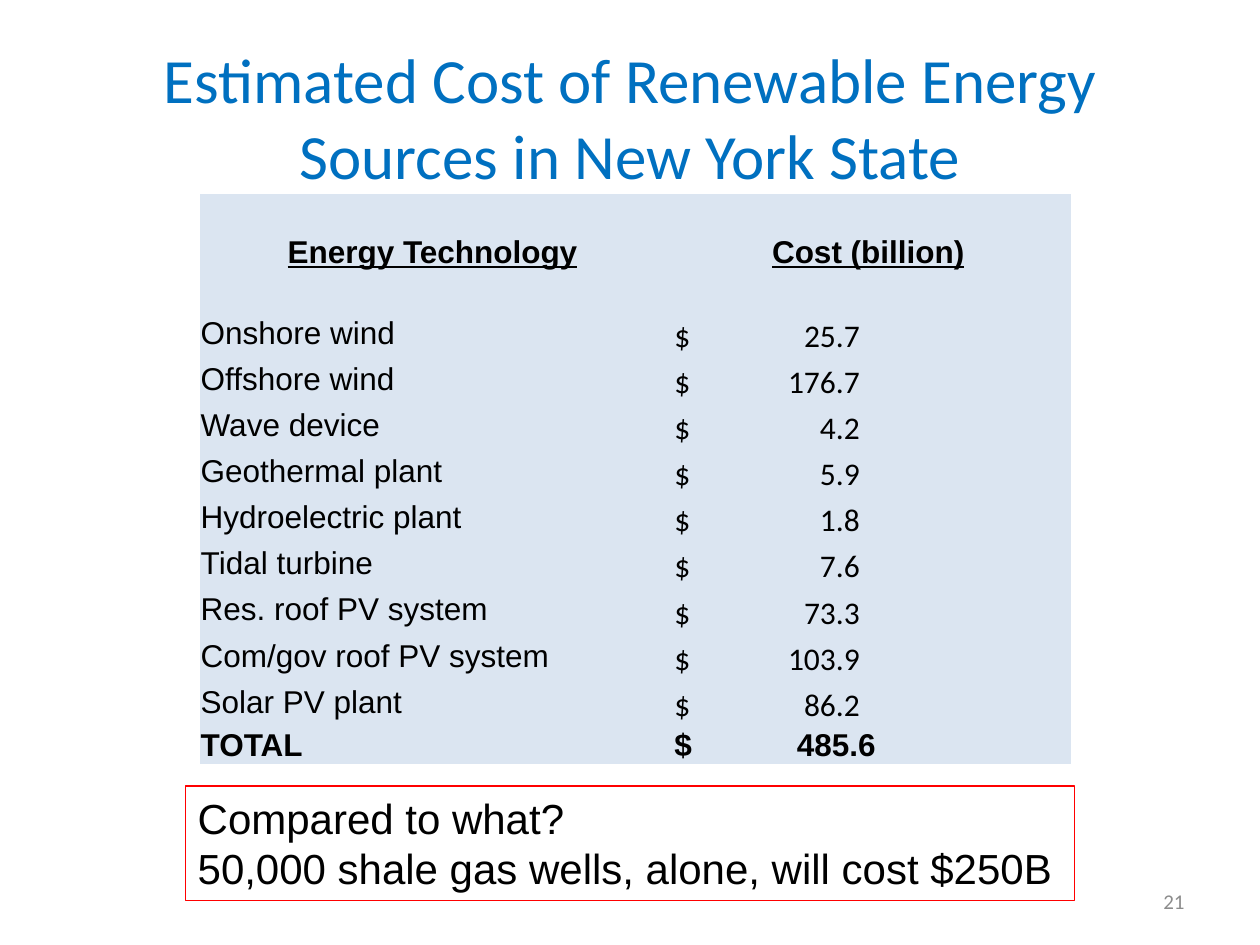
from dataclasses import dataclass

from lxml import etree
from pptx import Presentation
from pptx.dml.color import RGBColor
from pptx.enum import shapes, text
from pptx.oxml import ns
from pptx.util import Pt


@dataclass(frozen=True)
class Theme:
    heading: RGBColor = RGBColor(0x00, 0x70, 0xC0)
    ink: RGBColor = RGBColor(0, 0, 0)
    muted: RGBColor = RGBColor(0x8C, 0x8C, 0x8C)
    band: RGBColor = RGBColor(0xDB, 0xE5, 0xF1)
    paper: RGBColor = RGBColor(0xFF, 0xFF, 0xFF)
    alert: RGBColor = RGBColor(0xFF, 0, 0)
    sans: str = "Arial"
    body: str = "Calibri"
    title_size: int = 36
    note_size: int = 24
    table_size: int = 18
    number_size: int = 12


THEME = Theme()
NO_GRID_STYLE = "{2D5ABB26-0587-4C30-8999-92F81FD0307C}"
COSTS = [
    ("Onshore wind", "25.7"),
    ("Offshore wind", "176.7"),
    ("Wave device", "4.2"),
    ("Geothermal plant", "5.9"),
    ("Hydroelectric plant", "1.8"),
    ("Tidal turbine", "7.6"),
    ("Res. roof PV system", "73.3"),
    ("Com/gov roof PV system", "103.9"),
    ("Solar PV plant", "86.2"),
]


def style(paragraph, face, size, color, align=text.PP_ALIGN.LEFT, bold=False, underline=False):
    paragraph.alignment = align
    font = paragraph.font
    font.name, font.size, font.bold, font.underline = face, Pt(size), bold, underline
    font.color.rgb = color


def add_right_tab(paragraph, position):
    stops = etree.Element(ns.qn("a:tabLst"))
    etree.SubElement(stops, ns.qn("a:tab"), pos=str(Pt(position)), algn="r")
    paragraph.font
    properties = paragraph._p.get_or_add_pPr()
    properties.find(ns.qn("a:defRPr")).addprevious(stops)


def place_heading(slide, left, top, width, height):
    heading = slide.shapes.title
    heading.left, heading.top, heading.width, heading.height = map(Pt, (left, top, width, height))
    heading.text_frame.text = "Estimated Cost of Renewable Energy Sources in New York State"
    heading.text_frame.vertical_anchor = text.MSO_ANCHOR.MIDDLE
    style(heading.text_frame.paragraphs[0], THEME.body, THEME.title_size, THEME.heading,
          text.PP_ALIGN.CENTER)


def fill_cell(cell, wording, anchor, inset=0.7, face=THEME.sans, tab=None, **look):
    cell.fill.solid()
    cell.fill.fore_color.rgb = THEME.band
    cell.margin_left, cell.margin_right = Pt(inset), Pt(0.7)
    cell.margin_top, cell.margin_bottom = Pt(0.7), Pt(0)
    cell.vertical_anchor = anchor
    cell.text = wording
    paragraph = cell.text_frame.paragraphs[0]
    style(paragraph, face, THEME.table_size, THEME.ink, **look)
    if tab:
        add_right_tab(paragraph, tab)


def place_costs(slide, left, top, width, height):
    middle, bottom = text.MSO_ANCHOR.MIDDLE, text.MSO_ANCHOR.BOTTOM
    header_height, total_height = 66.3, 21.6
    row_height = (height - header_height - total_height) / len(COSTS)
    technology_width = 266.4

    frame = slide.shapes.add_table(len(COSTS) + 2, 2, Pt(left), Pt(top), Pt(width), Pt(height))
    costs = frame.table
    costs.first_row = costs.horz_banding = False
    costs._tbl.tblPr.find(ns.qn("a:tableStyleId")).text = NO_GRID_STYLE
    costs.columns[0].width = Pt(technology_width)
    costs.columns[1].width = Pt(width - technology_width)
    heights = [header_height] + [row_height] * len(COSTS) + [total_height]
    for row, row_size in zip(costs.rows, heights):
        row.height = Pt(row_size)

    for column, label in enumerate(("Energy Technology", "Cost (billion)")):
        fill_cell(costs.cell(0, column), label, middle,
                  align=text.PP_ALIGN.CENTER, bold=True, underline=True)
    for row, (technology, cost) in enumerate(COSTS, start=1):
        fill_cell(costs.cell(row, 0), technology, middle)
        fill_cell(costs.cell(row, 1), f"$\t{cost}", bottom, inset=5, face=THEME.body, tab=106)
    total = len(COSTS) + 1
    fill_cell(costs.cell(total, 0), "TOTAL", bottom, bold=True)
    fill_cell(costs.cell(total, 1), "$\t485.6", bottom, inset=5, tab=115, bold=True)


def place_comparison(slide, left, top, width, height):
    comparison = slide.shapes.add_shape(
        shapes.MSO_SHAPE.RECTANGLE, Pt(left), Pt(top), Pt(width), Pt(height))
    comparison.shadow.inherit = False
    comparison.fill.solid()
    comparison.fill.fore_color.rgb = THEME.paper
    comparison.line.color.rgb = THEME.alert
    comparison.line.width = Pt(0.75)
    words = comparison.text_frame
    words.text = "Compared to what?\n50,000 shale gas wells, alone, will cost $250B"
    words.word_wrap = False
    words.auto_size = text.MSO_AUTO_SIZE.SHAPE_TO_FIT_TEXT
    words.vertical_anchor = text.MSO_ANCHOR.TOP
    for paragraph in words.paragraphs:
        style(paragraph, THEME.sans, THEME.note_size, THEME.ink)


def place_page_number(slide, left, top, width, height):
    page_number = slide.shapes.add_textbox(Pt(left), Pt(top), Pt(width), Pt(height)).text_frame
    page_number.text = "21"
    page_number.word_wrap = True
    page_number.vertical_anchor = text.MSO_ANCHOR.MIDDLE
    style(page_number.paragraphs[0], THEME.body, THEME.number_size, THEME.muted,
          text.PP_ALIGN.RIGHT)


def main():
    deck = Presentation()
    deck.slide_width, deck.slide_height = Pt(720), Pt(540)
    slide = deck.slides.add_slide(deck.slide_layouts[5])
    place_heading(slide, 36, 21.6, 648, 90)
    place_page_number(slide, 516, 500.5, 168, 28.8)
    place_costs(slide, 114, 110.8, 498, 325)
    place_comparison(slide, 105.9, 449.2, 508.2, 65.4)
    deck.save("out.pptx")


if __name__ == "__main__":
    main()
